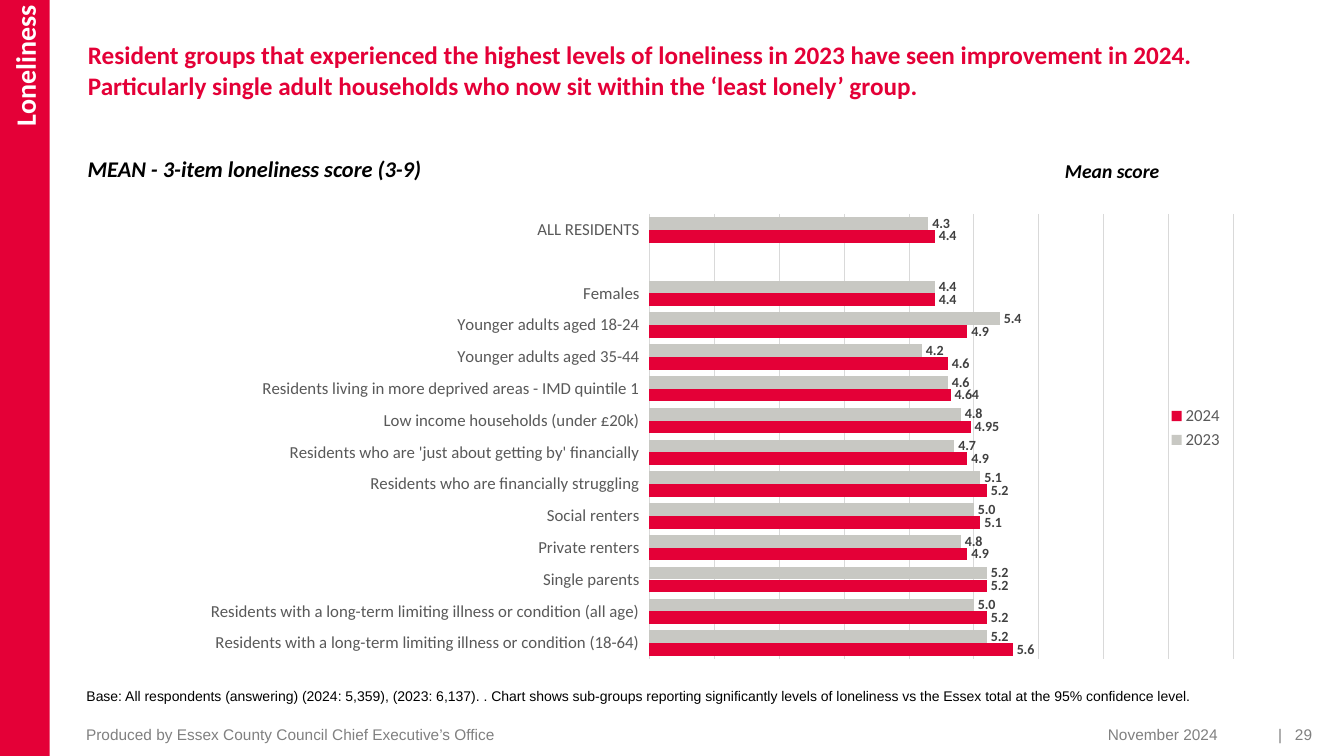
"""Build the loneliness slide: mean scores by resident group, 2023 against 2024."""
from lxml.etree import SubElement
from pptx import Presentation
from pptx.chart.data import CategoryChartData
from pptx.dml.color import RGBColor
from pptx.enum.chart import XL_CHART_TYPE as ChartType
from pptx.enum.chart import XL_LABEL_POSITION as LabelPosition
from pptx.enum.chart import XL_LEGEND_POSITION as LegendPosition
from pptx.enum.chart import XL_TICK_LABEL_POSITION as TickLabelPosition
from pptx.enum.chart import XL_TICK_MARK as TickMark
from pptx.enum.shapes import MSO_SHAPE as ShapeType
from pptx.enum.text import MSO_ANCHOR as Anchor
from pptx.enum.text import MSO_AUTO_SIZE as AutoSize
from pptx.enum.text import PP_ALIGN as Align
from pptx.oxml.ns import qn
from pptx.util import Cm, Pt

RED = RGBColor(0xE4, 0x00, 0x37)
SILVER = RGBColor(0xC8, 0xC8, 0xC3)
GRID = RGBColor(0xD9, 0xD9, 0xD9)
AXIS_TEXT = RGBColor(0x59, 0x59, 0x59)
LABEL_TEXT = RGBColor(0x40, 0x40, 0x40)
FOOTER_TEXT = RGBColor(0x80, 0x80, 0x80)
BLACK = RGBColor(0x00, 0x00, 0x00)
WHITE = RGBColor(0xFF, 0xFF, 0xFF)

SCORES = [
    ("ALL RESIDENTS", 4.3, 4.4),
    ("", None, None),
    ("Females", 4.4, 4.4),
    ("Younger adults aged 18-24", 5.4, 4.9),
    ("Younger adults aged 35-44", 4.2, 4.6),
    ("Residents living in more deprived areas - IMD quintile 1", 4.6, 4.64),
    ("Low income households (under £20k)", 4.8, 4.95),
    ("Residents who are 'just about getting by' financially", 4.7, 4.9),
    ("Residents who are financially struggling", 5.1, 5.2),
    ("Social renters", 5.0, 5.1),
    ("Private renters", 4.8, 4.9),
    ("Single parents", 5.2, 5.2),
    ("Residents with a long-term limiting illness or condition (all age)", 5.0, 5.2),
    ("Residents with a long-term limiting illness or condition (18-64)", 5.2, 5.6),
]


def style_font(font, name, size, color, bold=False, italic=False):
    font.name = name
    font.size = Pt(size)
    font.color.rgb = color
    font.bold = bold
    font.italic = italic


def add_text(slide, box, text, align, name, size, color, bold=False):
    shape = slide.shapes.add_textbox(*[Cm(length) for length in box])
    shape.text_frame.word_wrap = True
    paragraph = shape.text_frame.paragraphs[0]
    paragraph.text = text
    paragraph.alignment = align
    style_font(paragraph.font, name, size, color, bold, bold)
    return shape.text_frame


presentation = Presentation()
presentation.slide_width = Cm(33.87)
presentation.slide_height = Cm(19.05)
slide = presentation.slides.add_slide(presentation.slide_layouts[5])

title = slide.shapes.title
title.left, title.top, title.width, title.height = Cm(1.96), Cm(0.87), Cm(31.12), Cm(2.9)
title.text_frame.text = (
    "Resident groups that experienced the highest levels of loneliness in 2023 have seen "
    "improvement in 2024. Particularly single adult households who now sit within the "
    "‘least lonely’ group."
)
title.text_frame.auto_size = AutoSize.NONE
title.text_frame.vertical_anchor = Anchor.TOP
title.text_frame.margin_bottom = 0
paragraph = title.text_frame.paragraphs[0]
paragraph.alignment = Align.LEFT
style_font(paragraph.font, "Calibri", 18, RED, bold=True)

chart_data = CategoryChartData()
groups, scores_2023, scores_2024 = zip(*SCORES)
chart_data.categories = groups
chart_data.add_series("2023", scores_2023)
chart_data.add_series("2024", scores_2024)
chart = slide.shapes.add_chart(
    ChartType.BAR_CLUSTERED, Cm(2.45), Cm(4.96), Cm(28.65), Cm(11.66), chart_data
).chart
chart.has_title = False
style_font(chart.font, "Calibri", 10, BLACK)

plot = chart.plots[0]
plot.gap_width = 50
plot.overlap = 0
plot.vary_by_categories = False
for series, color, number_format in zip(plot.series, (SILVER, RED), ("#,##0.0", "General")):
    series.format.fill.solid()
    series.format.fill.fore_color.rgb = color
    series.invert_if_negative = False
    labels = series.data_labels
    labels.show_value = True
    labels.number_format = number_format
    labels.number_format_is_linked = False
    labels.position = LabelPosition.OUTSIDE_END
    style_font(labels.font, "Calibri", 10, LABEL_TEXT, bold=True)

category_axis = chart.category_axis
category_axis.reverse_order = True
category_axis.major_tick_mark = TickMark.NONE
category_axis.minor_tick_mark = TickMark.NONE
category_axis.tick_label_position = TickLabelPosition.LOW
category_axis.format.line.color.rgb = GRID
category_axis.format.line.width = Pt(0.75)
style_font(category_axis.tick_labels.font, "Calibri", 12, AXIS_TEXT)

value_axis = chart.value_axis
value_axis.visible = False
value_axis.minimum_scale = 0
value_axis.maximum_scale = 9
value_axis.major_unit = 1
value_axis.major_gridlines.format.line.color.rgb = GRID
value_axis.major_gridlines.format.line.width = Pt(0.75)

chart.has_legend = True
chart.legend.position = LegendPosition.RIGHT
chart.legend.include_in_layout = False
style_font(chart.legend.font, "Calibri", 12, AXIS_TEXT)

plot_area = plot._element.getparent()
for old_layout in plot_area.findall(qn("c:layout")):
    plot_area.remove(old_layout)
layout = SubElement(plot_area, qn("c:layout"))
plot_area.insert(0, layout)
manual_layout = SubElement(layout, qn("c:manualLayout"))
for tag, value in (
    ("layoutTarget", "inner"), ("xMode", "edge"), ("yMode", "edge"),
    ("x", "0.486"), ("y", "0.054"), ("w", "0.514"), ("h", "0.963"),
):
    SubElement(manual_layout, qn(f"c:{tag}")).set("val", value)

section_band = slide.shapes.add_shape(ShapeType.RECTANGLE, 0, 0, Cm(1.25), Cm(19.05))
section_band.shadow.inherit = False
section_band.fill.solid()
section_band.fill.fore_color.rgb = RED
section_band.line.fill.background()
frame = section_band.text_frame
frame.vertical_anchor = Anchor.MIDDLE
frame.margin_top = Cm(0.13)
frame._txBody.bodyPr.set("vert", "vert270")
paragraph = frame.paragraphs[0]
paragraph.text = "Loneliness"
paragraph.alignment = Align.RIGHT
style_font(paragraph.font, "Calibri", 20, WHITE, bold=True)

add_text(
    slide, (1.93, 17.2, 28.98, 0.69),
    "Base: All respondents (answering) (2024: 5,359), (2023: 6,137). . Chart shows sub-groups "
    "reporting significantly levels of loneliness vs the Essex total at the 95% confidence level.",
    Align.LEFT, "Arial", 10, BLACK,
).auto_size = AutoSize.SHAPE_TO_FIT_TEXT

for box, text, size in (
    ((21.01, 3.89, 8.46, 0.86), "Mean score", 14),
    ((1.78, 3.78, 9.09, 0.94), "MEAN - 3-item loneliness score (3-9)", 16),
):
    frame = add_text(slide, box, text, Align.RIGHT, "Calibri", size, BLACK, bold=True)
    frame.auto_size = AutoSize.SHAPE_TO_FIT_TEXT
    frame.paragraphs[0].space_before = Pt(6)

for left, width, text, align in (
    (1.94, 16.61, "Produced by Essex County Council Chief Executive’s Office", Align.LEFT),
    (24.59, 6.1, "November 2024", Align.RIGHT),
    (30.91, 2.16, "|   29", Align.RIGHT),
):
    frame = add_text(slide, (left, 18.31, width, 0.38), text, align, "Arial", 11, FOOTER_TEXT)
    frame.vertical_anchor = Anchor.MIDDLE
    frame.margin_left = Cm(0.23)
    frame.margin_right = 0

presentation.save("out.pptx")
